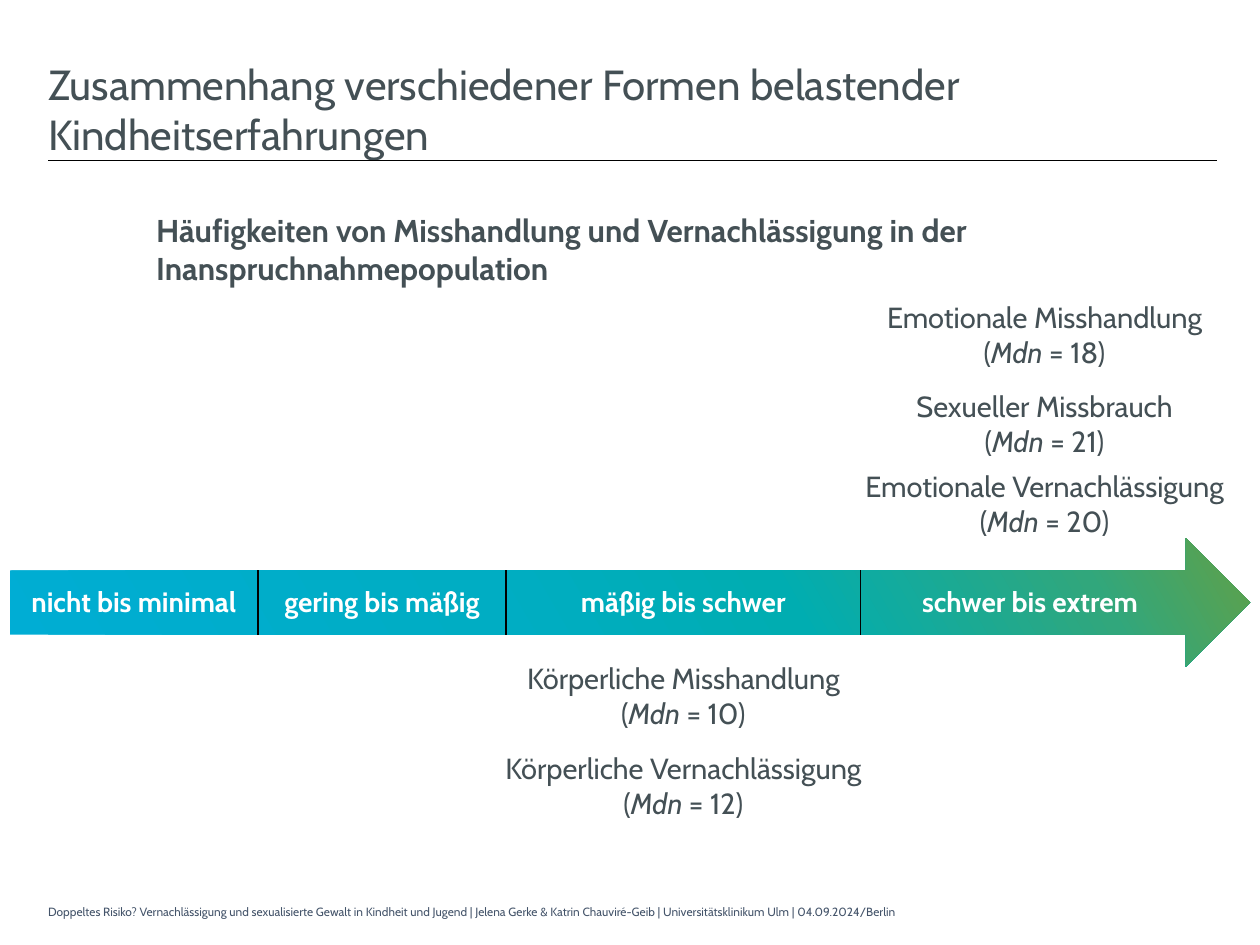
from dataclasses import dataclass

from lxml.etree import SubElement
from pptx import Presentation
from pptx.dml.color import RGBColor
from pptx.enum.shapes import MSO_CONNECTOR, MSO_SHAPE
from pptx.enum.text import MSO_ANCHOR, MSO_AUTO_SIZE, PP_ALIGN
from pptx.oxml.ns import qn
from pptx.util import Cm, Pt


@dataclass(frozen=True)
class Theme:
    font: str = "Cabin"
    text: str = "445055"
    footer: str = "44546A"
    rule: str = "000000"
    on_arrow: str = "FFFFFF"
    gradient: tuple = ((0, "00ADD4"), (39, "00ADC3"), (62, "00ADB1"),
                       (86, "31A77C"), (100, "61A047"))
    title_size: float = 24
    subtitle_size: float = 18
    label_size: float = 16.6
    level_size: float = 16
    footer_size: float = 6.8


@dataclass(frozen=True)
class Box:
    """Region of the slide, in centimetres."""
    left: float
    top: float
    width: float
    height: float

    def lengths(self):
        return Cm(self.left), Cm(self.top), Cm(self.width), Cm(self.height)


THEME = Theme()
HEADING_INSETS = (0, 0.15, 0, 0.1)

# Level of severity and width of its segment
LEVELS = [("nicht bis minimal", 5), ("gering bis mäßig", 5),
          ("mäßig bis schwer", 7.15), ("schwer bis extrem", 6.83)]

# Label, distance from the top of the group, width
SEVERE = [("Emotionale Misshandlung (*Mdn* = 18)", 0, 7.34),
          ("Sexueller Missbrauch (*Mdn* = 21)", 1.8, 6.2),
          ("Emotionale Vernachlässigung (*Mdn* = 20)", 3.4, 7.87)]
MODERATE = [("Körperliche Misshandlung (*Mdn* = 10)", 0, 7.34),
            ("Körperliche Vernachlässigung (*Mdn* = 12)", 1.83, 7.87)]


def write(frame, text, size, color=THEME.text, bold=False, align=PP_ALIGN.LEFT):
    """Fill the first paragraph; parts between asterisks are italic."""
    paragraph = frame.paragraphs[0]
    paragraph.alignment = align
    paragraph.space_before = Pt(0)
    for index, part in enumerate(text.split("*")):
        run = paragraph.add_run()
        run.text = part
        font = run.font
        font.name, font.size, font.bold = THEME.font, Pt(size), bold
        font.italic = index % 2 == 1
        font.color.rgb = RGBColor.from_string(color)


def set_frame(frame, insets, anchor):
    frame.word_wrap = True
    frame.auto_size = MSO_AUTO_SIZE.NONE
    frame.vertical_anchor = anchor
    (frame.margin_left, frame.margin_top,
     frame.margin_right, frame.margin_bottom) = map(Cm, insets)


def add_text(slide, box, text, insets=(0.25, 0.13, 0.25, 0.13),
             anchor=MSO_ANCHOR.MIDDLE, **text_format):
    frame = slide.shapes.add_textbox(*box.lengths()).text_frame
    set_frame(frame, insets, anchor)
    write(frame, text, **text_format)


def add_header(slide, box):
    # Title
    title = slide.shapes.title
    title.left, title.top, title.width, title.height = Box(
        box.left, box.top, 18.72, box.height).lengths()
    set_frame(title.text_frame, HEADING_INSETS, MSO_ANCHOR.TOP)
    write(title.text_frame,
          "Zusammenhang verschiedener Formen belastender Kindheitserfahrungen",
          size=THEME.title_size)

    # Rule along the bottom of the header
    bottom = Cm(box.top + box.height)
    rule = slide.shapes.add_connector(
        MSO_CONNECTOR.STRAIGHT, Cm(box.left), bottom,
        Cm(box.left + box.width), bottom)
    rule.line.color.rgb = RGBColor.from_string(THEME.rule)
    rule.line.width = Pt(0.5)
    SubElement(rule._element.spPr, qn("a:effectLst"))


def add_color(parent, color):
    SubElement(parent, qn("a:srgbClr"), val=color)


def add_arrow(slide, box):
    arrow = slide.shapes.add_shape(MSO_SHAPE.RIGHT_ARROW, *box.lengths())
    arrow.shadow.inherit = False
    arrow.line.fill.background()
    arrow.fill.gradient()
    arrow.fill.gradient_angle = 30
    stops = arrow._element.spPr.find(qn("a:gradFill")).find(qn("a:gsLst"))
    for stop in list(stops):
        stops.remove(stop)
    for percent, color in THEME.gradient:
        add_color(SubElement(stops, qn("a:gs"), pos=str(percent * 1000)), color)


def set_borders(cell, divider):
    """Clear all borders, except for a divider on the right if wanted."""
    properties = cell._tc.get_or_add_tcPr()
    for side in ("L", "R", "T", "B"):
        border = SubElement(properties, qn(f"a:ln{side}"), w=str(Pt(1)))
        if side == "R" and divider:
            add_color(SubElement(border, qn("a:solidFill")), THEME.rule)
        else:
            SubElement(border, qn("a:noFill"))


def add_level(slide, box, name, divider):
    table = slide.shapes.add_table(1, 1, *box.lengths()).table
    table.first_row = table.horz_banding = False
    cell = table.cell(0, 0)
    set_borders(cell, divider)
    cell.fill.background()
    cell.vertical_anchor = MSO_ANCHOR.MIDDLE
    write(cell.text_frame, name, size=THEME.level_size, color=THEME.on_arrow,
          bold=True, align=PP_ALIGN.CENTER)


def add_scale(slide, box):
    add_arrow(slide, box)
    # Levels fill the shaft, which is half as high as the arrow
    height = box.height / 2
    left, top = box.left, box.top + height / 2
    for name, width in LEVELS:
        add_level(slide, Box(left, top, width, height), name,
                  divider=name != LEVELS[-1][0])
        left += width


def add_labels(slide, box, labels):
    """Labels centred in the box."""
    for text, offset, width in labels:
        left = box.left + (box.width - width) / 2
        add_text(slide, Box(left, box.top + offset, width, 1.6), text,
                 size=THEME.label_size, align=PP_ALIGN.CENTER)


def main():
    presentation = Presentation()
    presentation.slide_width, presentation.slide_height = Cm(25.4), Cm(19.05)
    slide = presentation.slides.add_slide(presentation.slide_layouts[5])

    add_header(slide, Box(0.97, 1.02, 23.57, 2.21))
    add_text(slide, Box(3.15, 4.11, 20.57, 2.24),
             "Häufigkeiten von Misshandlung und Vernachlässigung in der "
             "Inanspruchnahmepopulation",
             insets=HEADING_INSETS, anchor=MSO_ANCHOR.TOP,
             size=THEME.subtitle_size, bold=True)
    add_scale(slide, Box(0.2, 10.85, 25, 2.59))
    add_labels(slide, Box(17.12, 5.94, 7.87, 5), SEVERE)
    add_labels(slide, Box(9.84, 13.21, 7.87, 3.43), MODERATE)
    add_text(slide, Box(0.97, 18.06, 17.63, 0.64),
             "Doppeltes Risiko? Vernachlässigung und sexualisierte Gewalt in "
             "Kindheit und Jugend | Jelena Gerke & Katrin Chauviré-Geib | "
             "Universitätsklinikum Ulm | 04.09.2024/Berlin",
             insets=(0, 0.13, 0.25, 0.13),
             size=THEME.footer_size, color=THEME.footer)

    presentation.save("out.pptx")


if __name__ == "__main__":
    main()
